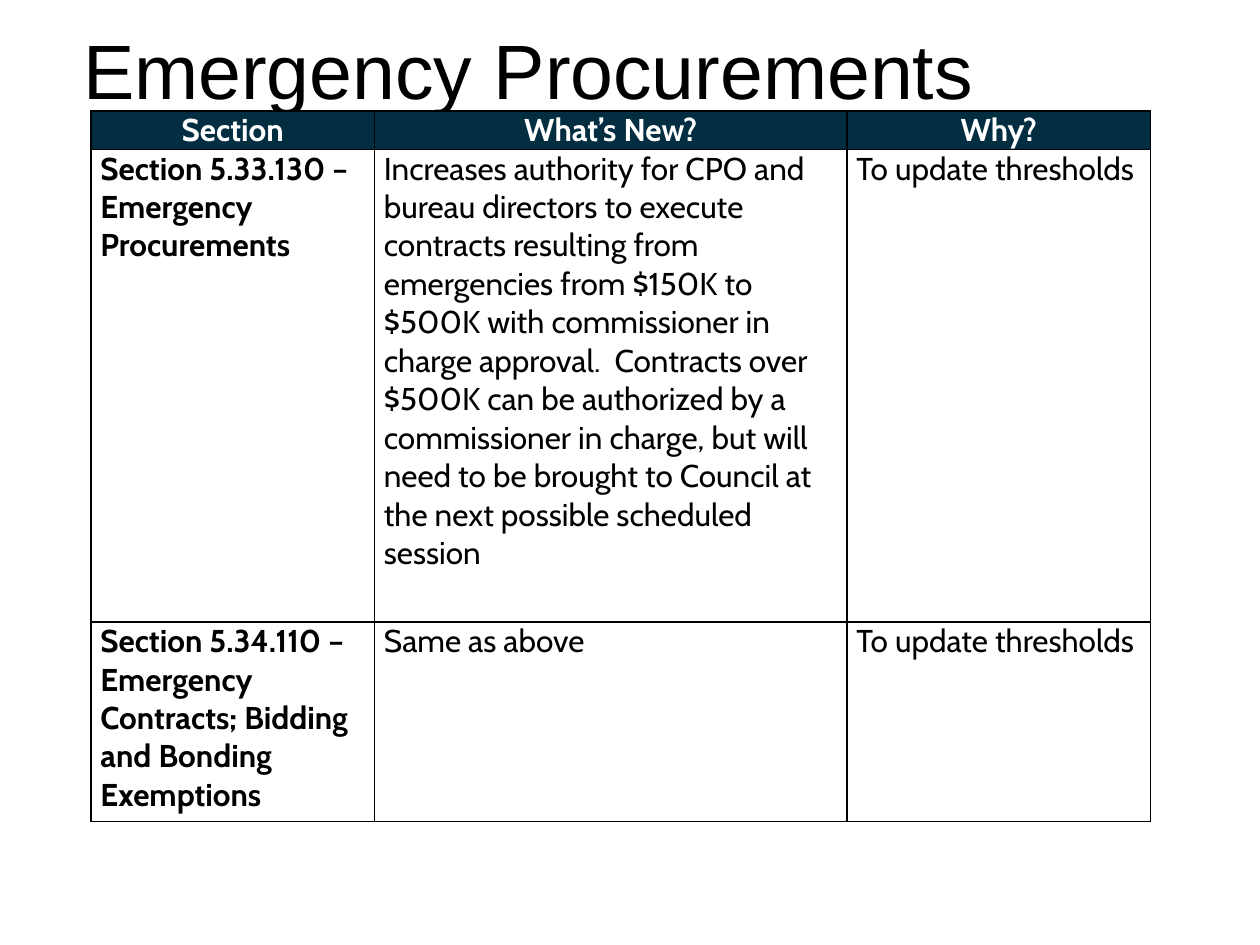
from dataclasses import dataclass

from lxml import etree
from pptx import Presentation
from pptx.dml.color import RGBColor
from pptx.enum import text
from pptx.oxml.ns import qn
from pptx.util import Pt


@dataclass(frozen=True)
class Theme:
    ink: str = "000000"
    header_fill: str = "032E41"
    header_ink: str = "FFFFFF"
    title_font: str = "Arial"
    table_font: str = "Cabin"
    title_size: float = 44
    table_size: float = 18
    border: float = 1


THEME = Theme()
COLUMN_WIDTHS = (162, 270, 173.5)
ROW_HEIGHTS = (21, 270, 114)
ROWS = (
    ("Section", "What’s New?", "Why?"),
    (
        "Section 5.33.130 – Emergency Procurements",
        "Increases authority for CPO and bureau directors to execute contracts "
        "resulting from emergencies from $150K to $500K with commissioner in "
        "charge approval.  Contracts over $500K can be authorized by a "
        "commissioner in charge, but will need to be brought to Council at the "
        "next possible scheduled session",
        "To update thresholds",
    ),
    (
        "Section 5.34.110 – Emergency Contracts; Bidding and Bonding Exemptions",
        "Same as above",
        "To update thresholds",
    ),
)


def set_font(p, name, size, color, bold=False):
    p.font.name = name
    p.font.size = Pt(size)
    p.font.bold = bold
    p.font.color.rgb = RGBColor.from_string(color)


def add_title(slide, title, left, top, width, height):
    sp = slide.shapes.title
    sp.left, sp.top, sp.width, sp.height = Pt(left), Pt(top), Pt(width), Pt(height)
    tf = sp.text_frame
    tf.text = title
    tf.word_wrap = True
    tf.auto_size = text.MSO_AUTO_SIZE.NONE
    tf.vertical_anchor = text.MSO_ANCHOR.TOP
    tf.margin_top = Pt(6.8)
    p = tf.paragraphs[0]
    p.alignment = text.PP_ALIGN.LEFT
    p.line_spacing = 0.89
    set_font(p, THEME.title_font, THEME.title_size, THEME.ink)


def add_borders(cell):
    """Draw all four sides; call before filling, as lines precede the fill."""
    tc_pr = cell._tc.get_or_add_tcPr()
    for side in ("lnL", "lnR", "lnT", "lnB"):
        ln = etree.SubElement(tc_pr, qn(f"a:{side}"), w=str(Pt(THEME.border)))
        fill = etree.SubElement(ln, qn("a:solidFill"))
        etree.SubElement(fill, qn("a:srgbClr"), val=THEME.ink)


def format_cell(cell, content, is_header, is_label):
    add_borders(cell)
    cell.margin_left = cell.margin_right = Pt(5.4)
    cell.margin_top = cell.margin_bottom = 0
    cell.text = content
    p = cell.text_frame.paragraphs[0]
    if is_header:
        cell.fill.solid()
        cell.fill.fore_color.rgb = RGBColor.from_string(THEME.header_fill)
        p.alignment = text.PP_ALIGN.CENTER
    else:
        cell.fill.background()
    color = THEME.header_ink if is_header else THEME.ink
    set_font(p, THEME.table_font, THEME.table_size, color, is_header or is_label)


def add_changes_table(slide, left, top):
    table = slide.shapes.add_table(
        len(ROWS), len(COLUMN_WIDTHS), Pt(left), Pt(top),
        Pt(sum(COLUMN_WIDTHS)), Pt(sum(ROW_HEIGHTS)),
    ).table
    table.horz_banding = False
    for column, width in zip(table.columns, COLUMN_WIDTHS):
        column.width = Pt(width)
    for i, (row, height) in enumerate(zip(ROWS, ROW_HEIGHTS)):
        table.rows[i].height = Pt(height)
        for j, content in enumerate(row):
            format_cell(table.cell(i, j), content, i == 0, j == 0)


def main():
    prs = Presentation()
    prs.slide_width, prs.slide_height = Pt(720), Pt(540)
    slide = prs.slides.add_slide(prs.slide_layouts[5])
    add_title(slide, "Emergency Procurements", 40.3, 12.2, 597, 78.5)
    add_changes_table(slide, 52, 63.5)
    prs.save("out.pptx")


if __name__ == "__main__":
    main()
